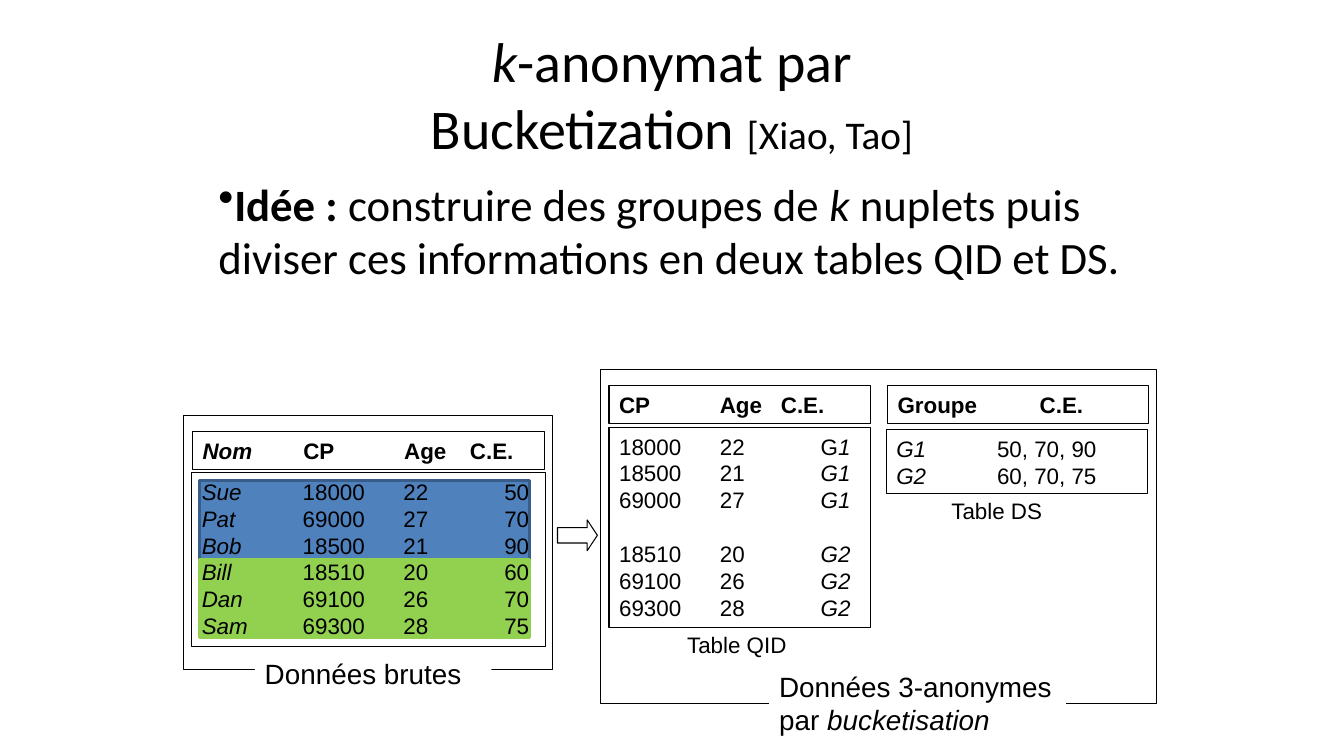
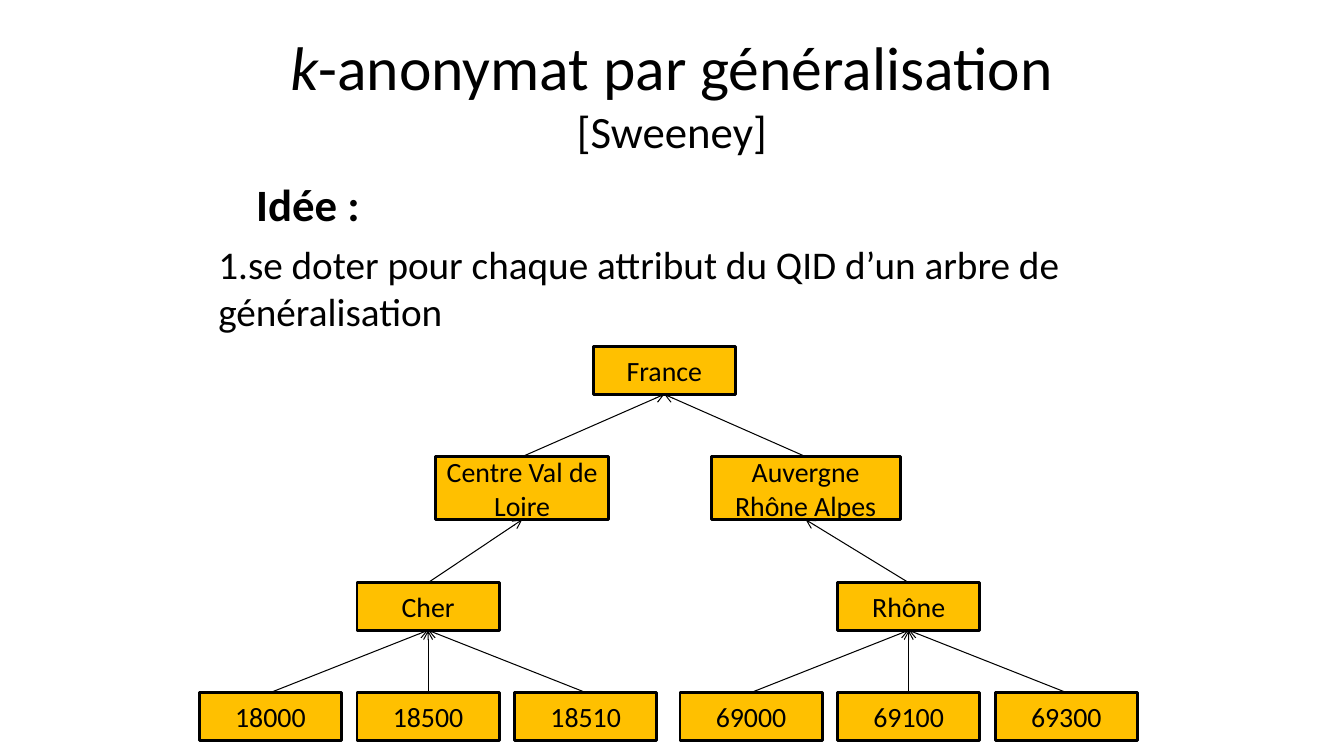
from lxml.etree import SubElement
from pptx import Presentation
from pptx.dml.color import RGBColor
from pptx.enum.shapes import MSO_CONNECTOR, MSO_SHAPE
from pptx.enum.text import MSO_ANCHOR, MSO_AUTO_SIZE, PP_ALIGN
from pptx.oxml.ns import qn
from pptx.util import Pt

BLACK = RGBColor(0x00, 0x00, 0x00)
WHITE = RGBColor(0xFF, 0xFF, 0xFF)
GREEN = RGBColor(0x92, 0xD0, 0x50)
BLUE = RGBColor(0x4F, 0x81, 0xBD)
DARK_BLUE = RGBColor(0x38, 0x5D, 0x8A)
AMBER = RGBColor(0xFF, 0xC0, 0x00)

TEXT_FONT, TABLE_FONT = "Calibri", "Arial"
TABLE_SIZE, LABEL_SIZE = 16, 19.9
NO_TABLE_STYLE = "{2D5ABB26-0587-4C30-8999-92F81FD0307C}"
PAD_X, PAD_Y, ROW_H = 7.2, 4, 19.2
TITLE_BOX = (156, 21.6, 648, 90)
BODY_BOX = (156, 126, 648, 120)
THIN, THICK = 0.75, 2


def pts(*lengths):
    return [Pt(n) for n in lengths]


def add_runs(p, text, size, font=TEXT_FONT, bold=False):
    """Append text to a paragraph; parts between asterisks are italic."""
    for i, part in enumerate(text.split("*")):
        if part:
            r = p.add_run()
            r.text = part
            r.font.size, r.font.name = Pt(size), font
            r.font.bold, r.font.italic = bold, i % 2 == 1
            r.font.color.rgb = BLACK


def set_margins(tf, left=0, top=0, right=0, bottom=0):
    tf.margin_left, tf.margin_top, tf.margin_right, tf.margin_bottom = pts(
        left, top, right, bottom)


def set_bullet(p, tag, **attrs):
    p_pr = p._p.get_or_add_pPr()
    p_pr.set("marL", "0")
    p_pr.set("indent", "0")
    SubElement(p_pr, qn(tag), **attrs)


def add_box(slide, box, fill=None, line=BLACK, width=THIN,
            shape=MSO_SHAPE.RECTANGLE):
    sp = slide.shapes.add_shape(shape, *pts(*box))
    sp.shadow.inherit = False
    if fill is None:
        sp.fill.background()
    else:
        sp.fill.solid()
        sp.fill.fore_color.rgb = fill
    sp.line.color.rgb = line
    sp.line.width = Pt(width)
    return sp


def add_titled_slide(prs):
    """Add a slide; return it with its title and body text frames."""
    slide = prs.slides.add_slide(prs.slide_layouts[5])
    title = slide.shapes.title
    title.left, title.top, title.width, title.height = pts(*TITLE_BOX)
    body = slide.shapes.add_textbox(*pts(*BODY_BOX))
    for sp in (title, body):
        tf = sp.text_frame
        tf.word_wrap, tf.auto_size = True, MSO_AUTO_SIZE.NONE
        set_margins(tf)
    title.text_frame.vertical_anchor = MSO_ANCHOR.MIDDLE
    title.text_frame.paragraphs[0].alignment = PP_ALIGN.CENTER
    return slide, title.text_frame, body.text_frame


def add_framed_table(slide, box, widths, rows, bold=False, gap_before=None):
    """Table in a thin frame; the last column takes the remaining width."""
    add_box(slide, box)
    x, y, w, h = box
    inner = w - 2 * PAD_X
    widths = [*widths, inner - sum(widths)]
    heights = [ROW_H * (2 if i == gap_before else 1) for i in range(len(rows))]
    frame = slide.shapes.add_table(
        len(rows), len(widths), *pts(x + PAD_X, y + PAD_Y, inner, sum(heights)))
    table = frame.table
    table.first_row = table.horz_banding = False
    table._tbl.tblPr.find(qn("a:tableStyleId")).text = NO_TABLE_STYLE
    for column, width in zip(table.columns, widths):
        column.width = Pt(width)
    for row, height, values in zip(table.rows, heights, rows):
        row.height = Pt(height)
        for cell, value in zip(row.cells, values):
            cell.fill.background()
            set_margins(cell)
            cell.vertical_anchor = MSO_ANCHOR.BOTTOM
            add_runs(cell.text_frame.paragraphs[0], value, TABLE_SIZE,
                     TABLE_FONT, bold)


def add_caption(slide, box, lines, size=LABEL_SIZE, fill=None):
    sp = slide.shapes.add_textbox(*pts(*box))
    if fill is not None:
        sp.fill.solid()
        sp.fill.fore_color.rgb = fill
    tf = sp.text_frame
    tf.word_wrap = True
    set_margins(tf, 7.2, 3.6, 0, 3.6)
    for i, line in enumerate(lines):
        p = tf.add_paragraph() if i else tf.paragraphs[0]
        add_runs(p, line, size, TABLE_FONT)


def add_raw_panel(slide, x, y):
    band_h = 56
    for i, (fill, line) in enumerate([(BLUE, DARK_BLUE), (GREEN, GREEN)]):
        add_box(slide, (x + 11.5, y + 46.8 + i * band_h, 236, band_h),
                fill, line, THICK)
    add_box(slide, (x, y, 264, 181.5))
    add_framed_table(slide, (x + 6.5, y + 11.5, 251.5, 27), (72, 72, 47),
                     [("*Nom*", "CP", "Age", "C.E.")], bold=True)
    add_framed_table(slide, (x + 6, y + 41, 252.5, 124), (72, 72, 72), [
        ("*Sue*", "18000", "22", "50"),
        ("*Pat*", "69000", "27", "70"),
        ("*Bob*", "18500", "21", "90"),
        ("*Bill*", "18510", "20", "60"),
        ("*Dan*", "69100", "26", "70"),
        ("*Sam*", "69300", "28", "75"),
    ])
    add_caption(slide, (x + 51, y + 169.2, 169, 31), ["Données brutes"],
                fill=WHITE)


def add_anonymous_panel(slide, x, y):
    add_box(slide, (x, y, 397, 238.3))
    add_framed_table(slide, (x + 6, y + 11.5, 187, 27), (72, 43.6),
                     [("CP", "Age", "C.E.")], bold=True)
    add_framed_table(slide, (x + 6, y + 41, 187, 143.3), (72, 72), [
        ("18000", "22", "G*1*"),
        ("18500", "21", "*G1*"),
        ("69000", "27", "*G1*"),
        ("18510", "20", "*G2*"),
        ("69100", "26", "*G2*"),
        ("69300", "28", "*G2*"),
    ], gap_before=3)
    add_framed_table(slide, (x + 205, y + 11.5, 186.5, 27), (101.5,),
                     [("Groupe", "C.E.")], bold=True)
    add_framed_table(slide, (x + 204, y + 42.5, 187, 46), (72,), [
        ("*G1*", "50, 70, 90"),
        ("*G2*", "60, 70, 75"),
    ])
    add_caption(slide, (x + 54.8, y + 183, 86, 27), ["Table QID"], TABLE_SIZE)
    add_caption(slide, (x + 243.5, y + 87, 80, 27), ["Table DS"], TABLE_SIZE)
    add_caption(slide, (x + 120.4, y + 210.3, 212, 55.4),
                ["Données 3-anonymes", "par *bucketisation*"], fill=WHITE)


def add_bucketization_slide(prs):
    slide, title, body = add_titled_slide(prs)
    p = title.paragraphs[0]
    add_runs(p, "*k*-anonymat par", 40)
    p.add_line_break()
    add_runs(p, "Bucketization ", 40)
    add_runs(p, "[Xiao, Tao]", 28)

    p = body.paragraphs[0]
    p.space_before = Pt(8)
    set_bullet(p, "a:buChar", char="•")
    add_runs(p, "Idée : ", 32, bold=True)
    add_runs(p, "construire des groupes de *k* nuplets puis diviser ces "
                "informations en deux tables QID et DS.", 32)

    add_raw_panel(slide, 131, 296.6)
    arrow = add_box(slide, (398.2, 371.4, 28.5, 22),
                    shape=MSO_SHAPE.RIGHT_ARROW)
    arrow.adjustments[1] = 0.33
    add_anonymous_panel(slide, 429, 264.2)


def add_node(slide, lines, center, top, width=101.5, height=34):
    sp = add_box(slide, (center - width / 2, top, width, height), AMBER,
                 width=THICK)
    tf = sp.text_frame
    tf.word_wrap, tf.vertical_anchor = True, MSO_ANCHOR.MIDDLE
    set_margins(tf, 7.2, 3.6, 7.2, 3.6)
    for i, line in enumerate(lines):
        p = tf.add_paragraph() if i else tf.paragraphs[0]
        p.alignment = PP_ALIGN.CENTER
        add_runs(p, line, LABEL_SIZE)
    return sp


def link(slide, child, parent):
    line = slide.shapes.add_connector(MSO_CONNECTOR.STRAIGHT, 0, 0, 0, 0)
    line.begin_connect(child, 0)
    line.end_connect(parent, 2)
    line.line.color.rgb = BLACK
    line.line.width = Pt(THIN)
    SubElement(line.line._get_or_add_ln(), qn("a:tailEnd"), type="arrow")
    SubElement(line._element.spPr, qn("a:effectLst"))


def add_tree(slide, x, y):
    pitch, branch_offset = 112.6, 343.3
    region_y, county_y, code_y = y + 78.5, y + 168.5, y + 247
    branches = [
        (["Centre Val de Loire"], 230.5, 124, "Cher",
         ["18000", "18500", "18510"]),
        (["Auvergne", "Rhône Alpes"], 433, 135, "Rhône",
         ["69000", "69100", "69300"]),
    ]
    root = add_node(slide, ["France"], x + 332, y)
    for i, (lines, center, width, county_name, codes) in enumerate(branches):
        middle = x + 163.3 + i * branch_offset
        region = add_node(slide, lines, x + center, region_y, width, 45)
        county = add_node(slide, [county_name], middle, county_y)
        link(slide, region, root)
        link(slide, county, region)
        for j, code in enumerate(codes):
            leaf = add_node(slide, [code], middle + (j - 1) * pitch, code_y)
            link(slide, leaf, county)


def add_generalisation_slide(prs):
    slide, title, body = add_titled_slide(prs)
    p = title.paragraphs[0]
    add_runs(p, "*k*-anonymat par généralisation ", 44)
    add_runs(p, "[Sweeney]", 32)

    p = body.paragraphs[0]
    p.space_before = Pt(8)
    p._p.get_or_add_pPr().set("marL", str(Pt(27)))
    add_runs(p, "Idée :", 32, bold=True)
    p = body.add_paragraph()
    p.space_before = Pt(7)
    set_bullet(p, "a:buAutoNum", type="arabicPeriod")
    add_runs(p, "se doter pour chaque attribut du QID d’un arbre de "
                "généralisation", 28)

    add_tree(slide, 142.5, 247.7)


def main():
    prs = Presentation()
    prs.slide_width, prs.slide_height = pts(960, 540)
    add_bucketization_slide(prs)
    add_generalisation_slide(prs)
    prs.save("out.pptx")


if __name__ == "__main__":
    main()
